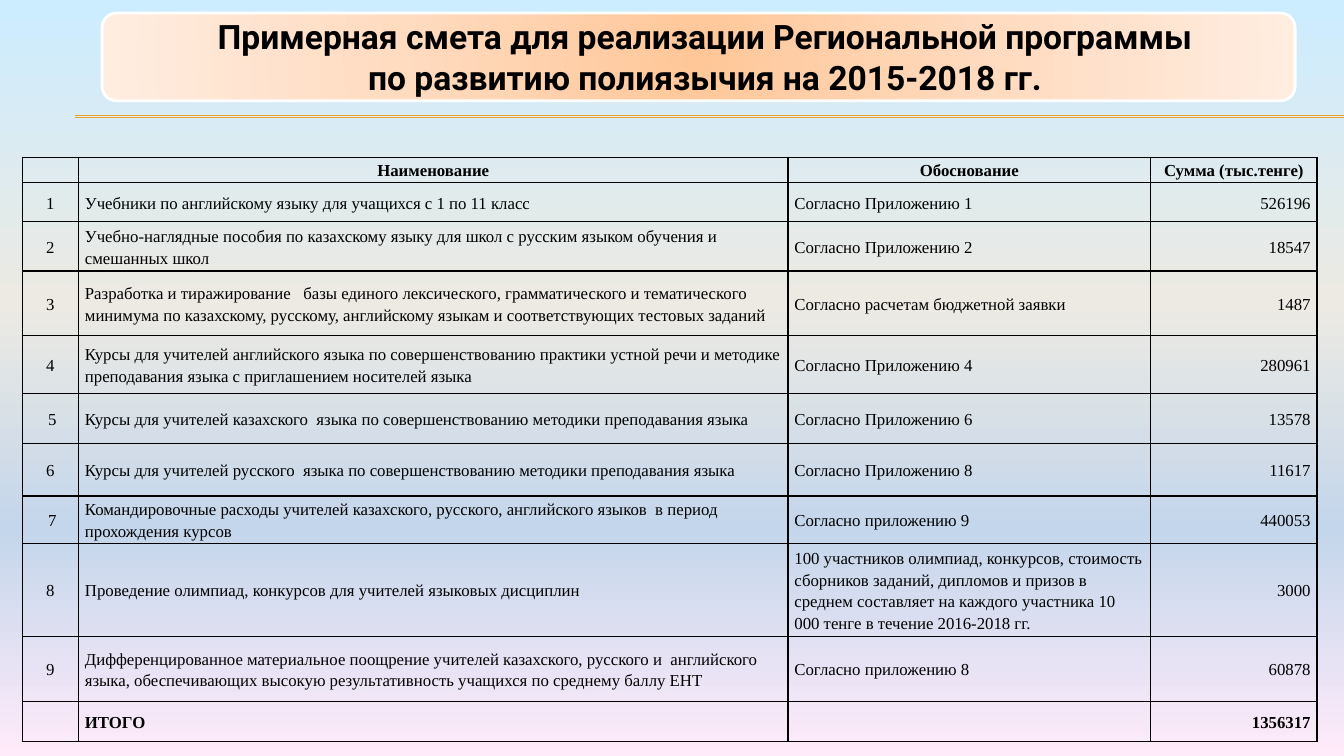
from lxml import etree
from pptx import Presentation
from pptx.dml.color import RGBColor
from pptx.enum import shapes, text
from pptx.oxml import ns
from pptx.util import Cm, Pt

# Content
TITLE = ["Примерная смета для реализации Региональной программы",
         "по развитию полиязычия на 2015-2018 гг."]
# Row height in cm, then the four cells
ROWS = [
    (0.64, "", "Наименование", "Обоснование", "Сумма (тыс.тенге)"),
    (0.99, "1", "Учебники по английскому языку для учащихся с 1 по 11 класс",
     "Согласно Приложению 1", "526196"),
    (1.24, "2", "Учебно-наглядные пособия по казахскому языку для школ с русским "
     "языком обучения и смешанных школ", "Согласно Приложению 2", "18547"),
    (1.63, "3", "Разработка и тиражирование   базы единого лексического, "
     "грамматического и тематического минимума по казахскому, русскому, "
     "английскому языкам и соответствующих тестовых заданий",
     "Согласно расчетам бюджетной заявки", "1487"),
    (1.45, "4", "Курсы для учителей английского языка по совершенствованию практики "
     "устной речи и методике преподавания языка с приглашением носителей языка",
     "Согласно Приложению 4", "280961"),
    (1.27, " 5", "Курсы для учителей казахского  языка по совершенствованию "
     "методики преподавания языка", "Согласно Приложению 6", "13578"),
    (1.32, "6", "Курсы для учителей русского  языка по совершенствованию "
     "методики преподавания языка", "Согласно Приложению 8", "11617"),
    (1.19, " 7", "Командировочные расходы учителей казахского, русского, английского "
     "языков  в период прохождения курсов", "Согласно приложению 9", "440053"),
    (2.35, "8", "Проведение олимпиад, конкурсов для учителей языковых дисциплин",
     "100 участников олимпиад, конкурсов, стоимость сборников заданий, дипломов "
     "и призов в среднем составляет на каждого участника 10 000 тенге в течение "
     "2016-2018 гг.", "3000"),
    (1.63, "9", "Дифференцированное материальное поощрение учителей казахского, "
     "русского и  английского языка, обеспечивающих высокую результативность "
     "учащихся по среднему баллу ЕНТ", "Согласно приложению 8", "60878"),
    (1.02, "", "ИТОГО", "", "1356317"),
]
COLUMN_WIDTHS = [1.42, 17.88, 9.14, 4.19]
BACKGROUND = [(0, "CCECFF"), (40, "ECEAE3"), (70, "C4D6EB"), (100, "FFEBFA")]
BANNER = [(0, "FFC798"), (50, "FFDBC0"), (100, "FFEDE0")]
BLACK, WHITE, GOLD = "000000", "FFFFFF", "F0A22E"
LEFT, CENTER, RIGHT = text.PP_ALIGN.LEFT, text.PP_ALIGN.CENTER, text.PP_ALIGN.RIGHT
COLUMN_ALIGNMENT = [CENTER, LEFT, LEFT, RIGHT]


def color(hex_string):
    return RGBColor.from_string(hex_string)


def add_element(parent, tag, **attributes):
    return etree.SubElement(parent, ns.qn(tag), attributes)


def set_gradient(fill, owner, stops, circular=False):
    """Give the first fill inside owner a linear (downward) or circular gradient."""
    fill.gradient()
    gradient = owner.find(".//" + ns.qn("a:gradFill"))
    for child in list(gradient):
        gradient.remove(child)
    stop_list = add_element(gradient, "a:gsLst")
    for position, hex_string in stops:
        stop = add_element(stop_list, "a:gs", pos=str(position * 1000))
        add_element(stop, "a:srgbClr", val=hex_string)
    if circular:
        center = add_element(gradient, "a:path", path="circle")
        add_element(center, "a:fillToRect", l="50000", t="50000", r="50000", b="50000")
    else:
        add_element(gradient, "a:lin", ang="5400000", scaled="0")


def set_font(paragraph, name, size, bold):
    font = paragraph.font
    font.name, font.size, font.bold = name, Pt(size), bold
    font.color.rgb = color(BLACK)


def set_borders(cell):
    properties = cell._tc.get_or_add_tcPr()
    for index, side in enumerate(("a:lnL", "a:lnR", "a:lnT", "a:lnB")):
        line = etree.Element(ns.qn(side), w=str(Pt(1)))
        add_element(add_element(line, "a:solidFill"), "a:srgbClr", val=BLACK)
        properties.insert(index, line)


presentation = Presentation()
presentation.slide_width, presentation.slide_height = Cm(33.87), Cm(19.05)
slide = presentation.slides.add_slide(presentation.slide_layouts[5])
set_gradient(slide.background.fill, slide.element, BACKGROUND)

# Double rule under the title
for y in (2.92, 2.95):
    rule = slide.shapes.add_connector(
        shapes.MSO_CONNECTOR.STRAIGHT, Cm(1.9), Cm(y), presentation.slide_width, Cm(y))
    rule.line.color.rgb = color(GOLD)
    rule.line.width = Pt(0.75)
    add_element(rule.element.spPr, "a:effectLst")

# Estimate table
table = slide.shapes.add_table(
    len(ROWS), len(COLUMN_WIDTHS), Cm(0.56), Cm(3.96),
    Cm(sum(COLUMN_WIDTHS)), Cm(sum(row[0] for row in ROWS))).table
table.horz_banding = False
for column, width in zip(table.columns, COLUMN_WIDTHS):
    column.width = Cm(width)
for row_index, (height, *values) in enumerate(ROWS):
    table.rows[row_index].height = Cm(height)
    is_header = row_index == 0
    is_bold = is_header or row_index == len(ROWS) - 1
    for column_index, value in enumerate(values):
        cell = table.cell(row_index, column_index)
        cell.fill.background()
        set_borders(cell)
        cell.vertical_anchor = text.MSO_ANCHOR.MIDDLE
        cell.margin_left = cell.margin_right = Cm(0.16)
        cell.margin_top = cell.margin_bottom = 0
        cell.text = value
        paragraph = cell.text_frame.paragraphs[0]
        paragraph.alignment = CENTER if is_header else COLUMN_ALIGNMENT[column_index]
        paragraph.line_spacing = 1.15
        set_font(paragraph, "Times New Roman", 12, is_bold)

# Title banner
banner = slide.shapes.add_shape(
    shapes.MSO_SHAPE.ROUNDED_RECTANGLE, Cm(2.57), Cm(0.33), Cm(30.07), Cm(2.21))
banner.shadow.inherit = False
set_gradient(banner.fill, banner.element, BANNER, circular=True)
banner.line.color.rgb = color(WHITE)
banner.line.width = Pt(2)

# Title, brought in front of the banner
title = slide.shapes.title
title.left, title.top, title.width, title.height = Cm(4.45), Cm(0.28), Cm(26.64), Cm(2.31)
banner.element.addnext(title.element)
frame = title.text_frame
frame.text = "\n".join(TITLE)
frame.word_wrap = True
frame.auto_size = text.MSO_AUTO_SIZE.SHAPE_TO_FIT_TEXT
frame.vertical_anchor = text.MSO_ANCHOR.TOP
for paragraph in frame.paragraphs:
    paragraph.alignment = CENTER
    set_font(paragraph, "Roboto", 24, True)

presentation.save("out.pptx")
